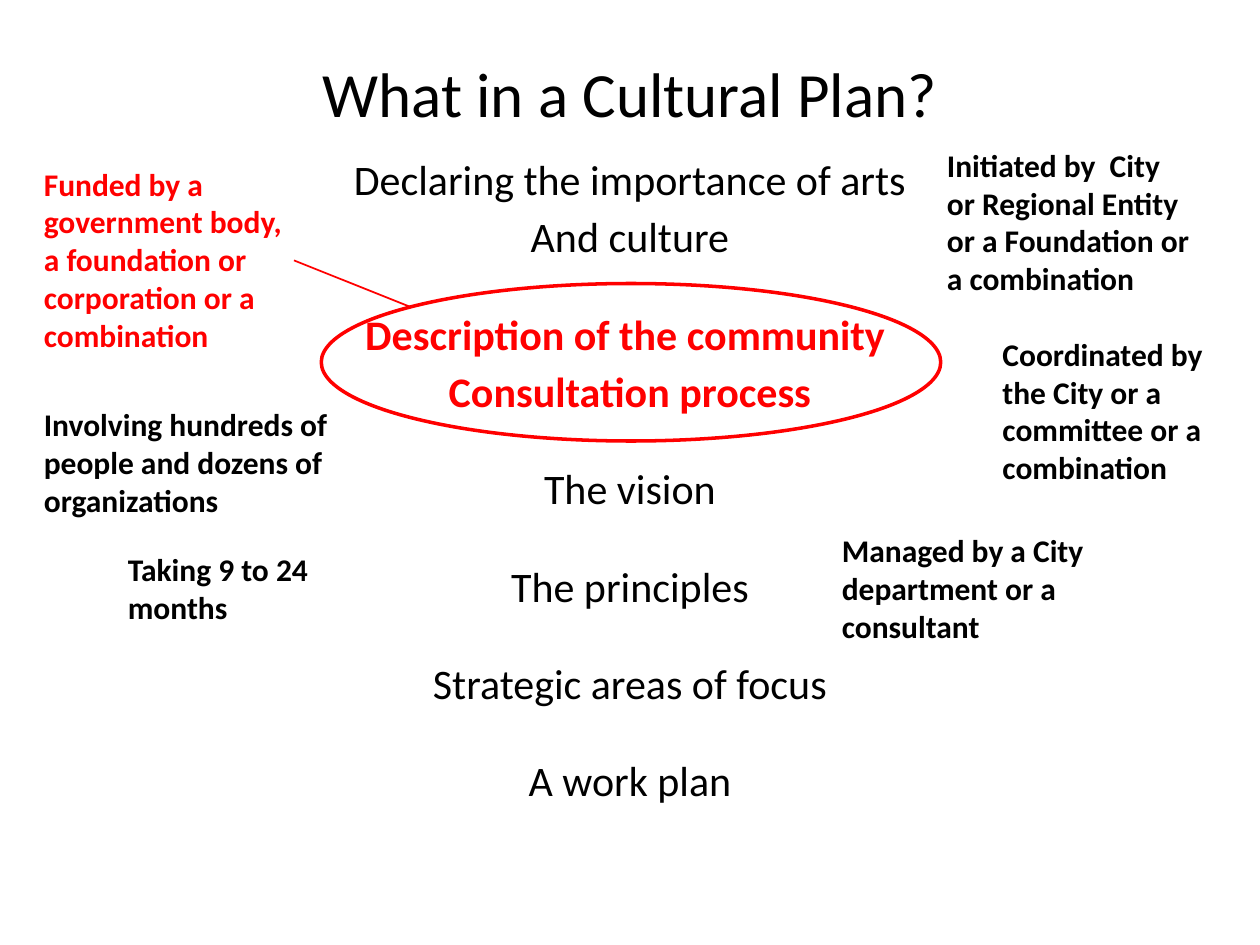
import dataclasses

import pptx
import pptx.dml.color
import pptx.enum.shapes
import pptx.enum.text
import pptx.oxml
import pptx.util

COLUMNS, ROWS = 120, 90
BLACK, RED = "000000", "FF0000"
LEFT, CENTER = pptx.enum.text.PP_ALIGN.LEFT, pptx.enum.text.PP_ALIGN.CENTER
TOP, MIDDLE = pptx.enum.text.MSO_ANCHOR.TOP, pptx.enum.text.MSO_ANCHOR.MIDDLE


@dataclasses.dataclass(frozen=True)
class Area:
    """A place on the slide in grid columns and rows."""
    column: float
    row: float
    columns: float
    rows: float


@dataclasses.dataclass(frozen=True)
class Line:
    """One paragraph and its look."""
    text: str
    color: str = BLACK
    bold: bool = False
    size: float = 24
    before: float = 0


@dataclasses.dataclass(frozen=True)
class Note:
    """A bold remark beside the plan."""
    area: Area
    texts: tuple[str, ...]
    color: str = BLACK


STEP, GAP = 4.2, 26.7
TITLE = Line("What in a Cultural Plan?", size=36)
CONTENTS = [
    Line("Declaring the importance of arts"),
    Line("And culture", before=STEP),
    Line("Description of the community ", RED, True, before=GAP),
    Line("Consultation process", RED, True, before=STEP),
    Line("The vision", before=GAP),
    Line("The principles", before=GAP),
    Line("Strategic areas of focus", before=GAP),
    Line("A work plan", before=GAP),
]
NOTES = [
    Note(Area(89, 13.3, 26, 15.7),
         ("Initiated by  City or Regional Entity or a Foundation or a combination",)),
    Note(Area(3, 15.1, 27.6, 19.4),
         ("Funded by a government body,",
          "a foundation or corporation or a combination"), RED),
    Note(Area(94.3, 31.3, 25, 15.7),
         ("Coordinated by the City or a committee or a combination",)),
    Note(Area(3, 38, 30, 12.1),
         ("Involving hundreds of people and dozens of organizations",)),
    Note(Area(79, 50, 29, 12.1),
         ("Managed by a City department or a consultant",)),
    Note(Area(11, 51.8, 28, 8.5), ("Taking 9 to 24 months",)),
]

deck = pptx.Presentation()
deck.slide_width, deck.slide_height = pptx.util.Inches(10), pptx.util.Inches(7.5)
page = deck.slides.add_slide(deck.slide_layouts[6])


def color_of(code: str) -> pptx.dml.color.RGBColor:
    """Turn a hex string into a colour."""
    return pptx.dml.color.RGBColor.from_string(code)


def across(columns: float) -> int:
    """Measure grid columns."""
    return round(deck.slide_width * columns / COLUMNS)


def down(rows: float) -> int:
    """Measure grid rows."""
    return round(deck.slide_height * rows / ROWS)


def place(area: Area) -> tuple[int, int, int, int]:
    """Give left, top, width and height of an area."""
    return across(area.column), down(area.row), across(area.columns), down(area.rows)


def write(area: Area, lines: list[Line], align=LEFT, anchor=TOP) -> None:
    """Add a wrapping text box with one paragraph per line."""
    frame = page.shapes.add_textbox(*place(area)).text_frame
    frame.word_wrap = True
    frame.vertical_anchor = anchor
    for index, line in enumerate(lines):
        para = frame.add_paragraph() if index else frame.paragraphs[0]
        para.alignment = align
        para.space_before = pptx.util.Pt(line.before)
        span = para.add_run()
        span.text = line.text
        span.font.name = "Calibri"
        span.font.size = pptx.util.Pt(line.size)
        span.font.bold = line.bold
        span.font.color.rgb = color_of(line.color)


def circle(area: Area, color: str, width: float) -> None:
    """Draw an unfilled ellipse."""
    ring = page.shapes.add_shape(pptx.enum.shapes.MSO_SHAPE.OVAL, *place(area))
    ring.shadow.inherit = False
    ring.fill.background()
    ring.line.color.rgb = color_of(color)
    ring.line.width = pptx.util.Pt(width)


def connect(start: tuple[float, float], end: tuple[float, float],
            color: str, width: float) -> None:
    """Draw a straight line between two grid points."""
    link = page.shapes.add_connector(
        pptx.enum.shapes.MSO_CONNECTOR.STRAIGHT,
        across(start[0]), down(start[1]), across(end[0]), down(end[1]))
    link.line.color.rgb = color_of(color)
    link.line.width = pptx.util.Pt(width)
    link._element.spPr.append(pptx.oxml.parse_xml(
        '<a:effectLst xmlns:a="http://schemas.openxmlformats.org/drawingml/2006/main"/>'))


def main() -> None:
    """Build the slide and save it."""
    write(Area(6, 3.6, 108, 10.4), [TITLE], CENTER, MIDDLE)
    write(Area(6, 14, 108, 66.4), CONTENTS, CENTER)
    circle(Area(30.6, 27, 59, 15), RED, 2)
    for note in NOTES:
        write(note.area, [Line(text, note.color, True, 18) for text in note.texts])
    connect((28, 24.8), (39, 29.2), RED, 1)
    deck.save("out.pptx")


if __name__ == "__main__":
    main()
